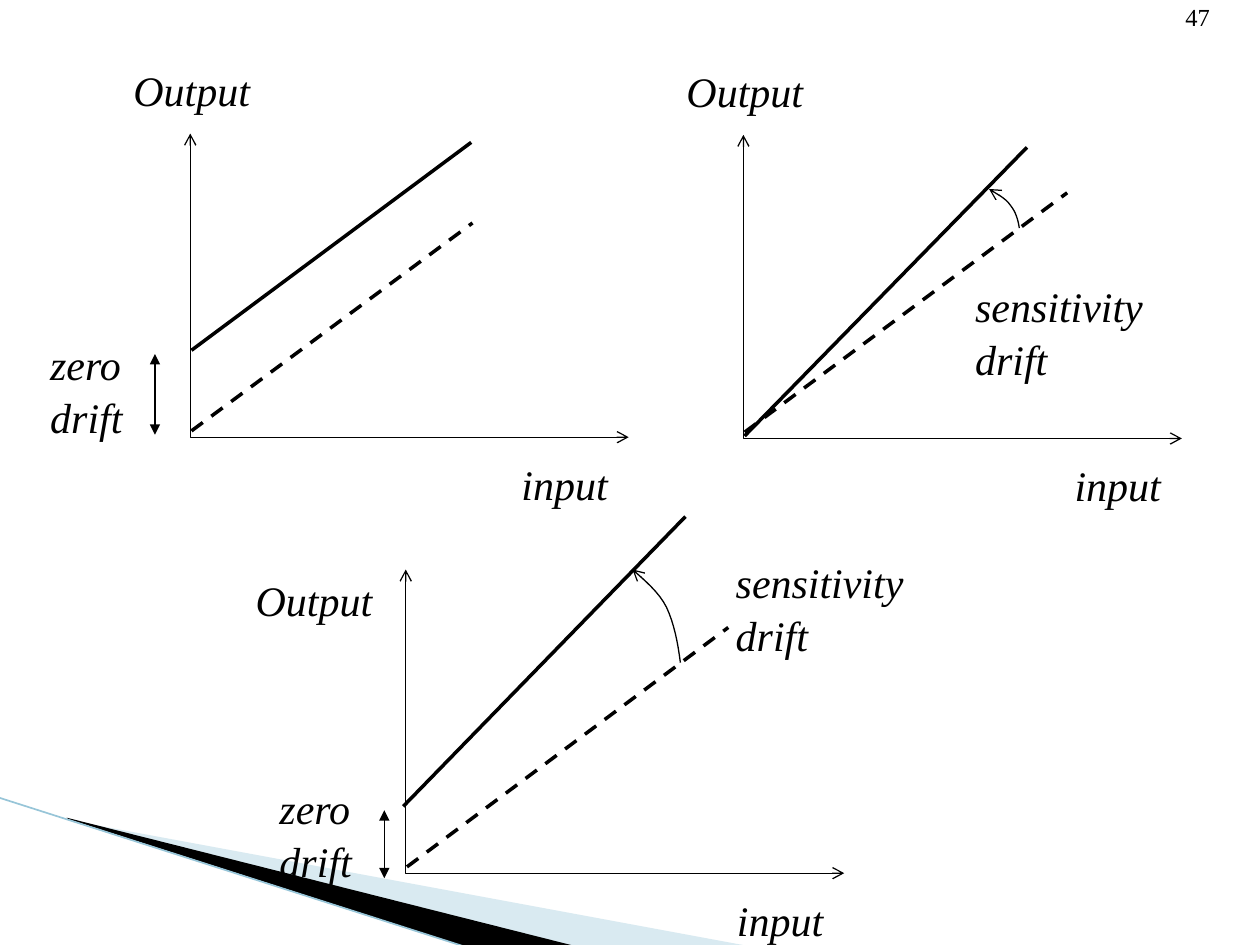
from lxml import etree
from pptx import Presentation
from pptx.dml.color import RGBColor
from pptx.enum.dml import MSO_LINE
from pptx.enum.shapes import MSO_CONNECTOR
from pptx.enum.text import MSO_AUTO_SIZE, PP_ALIGN
from pptx.oxml.ns import qn
from pptx.util import Pt

PX = 9144  # EMU per px, 100 px to the inch
DASH = MSO_LINE.DASH
STRAIGHT = MSO_CONNECTOR.STRAIGHT
RIGHT = PP_ALIGN.RIGHT
LEFT = PP_ALIGN.LEFT
FIT_SHAPE = MSO_AUTO_SIZE.SHAPE_TO_FIT_TEXT
BLACK = "000000"


def color(hex_string):
    return RGBColor.from_string(hex_string)


def add_text(slide, text, x, y, w, h, size=24, italic=True, wrap=False,
             align=LEFT, spacing=1.05, fit=True):
    box = slide.shapes.add_textbox(x * PX, y * PX, w * PX, h * PX)
    frame = box.text_frame
    frame.word_wrap = wrap
    if fit:
        frame.auto_size = FIT_SHAPE
    paragraph = frame.paragraphs[0]
    paragraph.alignment = align
    paragraph.line_spacing = spacing
    run = paragraph.add_run()
    run.text = text
    run.font.name = "Times New Roman"
    run.font.size = Pt(size)
    run.font.italic = italic
    run.font.color.rgb = color(BLACK)


def style_line(shape, width, line_color=BLACK, dash=None, head=None, tail=None):
    line = shape.line
    line.color.rgb = color(line_color)
    line.width = Pt(width)
    if dash:
        line.dash_style = dash
    ln = line._get_or_add_ln()
    for tag, arrow in (("a:headEnd", head), ("a:tailEnd", tail)):
        if arrow:
            etree.SubElement(ln, qn(tag), type=arrow)


def add_line(slide, start, end, width=2, **style):
    ends = [value * PX for value in (*start, *end)]
    line = slide.shapes.add_connector(STRAIGHT, *ends)
    style_line(line, width, **style)
    etree.SubElement(line._element.spPr, qn("a:effectLst"))


def add_outline(slide, points, close=False):
    points = [(round(x * PX), round(y * PX)) for x, y in points]
    builder = slide.shapes.build_freeform(*points[0], scale=1.0)
    builder.add_line_segments(points[1:], close=close)
    outline = builder.convert_to_shape()
    outline.shadow.inherit = False
    return outline


def add_wedge(slide, points, fill, alpha=100):
    wedge = add_outline(slide, points, close=True)
    wedge.fill.solid()
    wedge.fill.fore_color.rgb = color(fill)
    wedge.line.fill.background()
    if alpha < 100:
        srgb = wedge._element.spPr.find(".//" + qn("a:srgbClr"))
        etree.SubElement(srgb, qn("a:alpha"), val=str(alpha * 1000))


def bezier(p0, p1, p2, p3, steps=8):
    """Points along a cubic curve, without its start."""
    for step in range(1, steps + 1):
        t = step / steps
        u = 1 - t
        yield tuple(u**3 * a + 3 * u * u * t * b + 3 * u * t * t * c + t**3 * d
                    for a, b, c, d in zip(p0, p1, p2, p3))


def add_drift_arrow(slide, controls):
    points = [controls[0], *bezier(*controls[:4]), *bezier(*controls[3:])]
    arrow = add_outline(slide, points)
    arrow.fill.background()
    style_line(arrow, 0.75, tail="arrow")


def add_axes(slide, x, y, output_at):
    axes = add_outline(slide, [(x, y), (x, y + 241), (x + 348, y + 241)])
    axes.fill.background()
    style_line(axes, 0.75, head="arrow", tail="arrow")
    add_text(slide, "input", x + 253, y + 251, 89, 50)
    add_text(slide, "Output", *output_at, 113, 50)


def add_zero_drift(slide, label_at, x, bottom, top):
    add_line(slide, (x, bottom), (x, top), width=0.75,
             head="triangle", tail="triangle")
    add_text(slide, "zero drift", *label_at, 90, 90, wrap=True)


def add_sensitivity_drift(slide, label_at, controls):
    add_text(slide, "sensitivity drift", *label_at, 189, 90, wrap=True)
    add_drift_arrow(slide, controls)


def add_responses(slide, actual, nominal):
    add_line(slide, *actual)
    add_line(slide, *nominal, dash=DASH)


def main():
    prs = Presentation()
    prs.slide_width, prs.slide_height = 1000 * PX, 750 * PX
    slide = prs.slides.add_slide(prs.slide_layouts[6])

    # Corner decoration and slide number
    add_wedge(slide, [(55, 651), (595, 751), (456, 751), (55, 650)], "A0CBDC", 40)
    add_wedge(slide, [(53, 649), (457, 751), (372, 752), (54, 650)], BLACK)
    add_line(slide, (-1, 633), (371, 752), width=0.95, line_color="97C5D8")
    add_text(slide, "47", 762, -3, 208, 50, size=14, italic=False, wrap=True,
             align=RIGHT, spacing=1.0, fit=False)

    # Zero drift
    add_axes(slide, 151, 106, (96, 44))
    add_responses(slide, ((152, 278), (374, 113)), ((152, 342), (375, 177)))
    add_zero_drift(slide, (30, 262), 123, 345, 281)

    # Sensitivity drift
    add_axes(slide, 590, 107, (535, 45))
    add_responses(slide, ((591, 346), (815, 117)), ((591, 343), (847, 153)))
    add_sensitivity_drift(slide, (764, 216), [
        (809, 181), (808, 174), (806, 168), (802, 163),
        (798, 157), (791, 154), (785, 150)])

    # Both drifts together
    add_axes(slide, 322, 452, (193, 449))
    add_responses(slide, ((320, 640), (544, 410)), ((323, 688), (578, 498)))
    add_sensitivity_drift(slide, (574, 435), [
        (540, 526), (538, 510), (535, 495), (529, 482),
        (523, 470), (512, 461), (502, 452)])
    add_zero_drift(slide, (212, 614), 305, 697, 643)

    prs.save("out.pptx")


if __name__ == "__main__":
    main()
